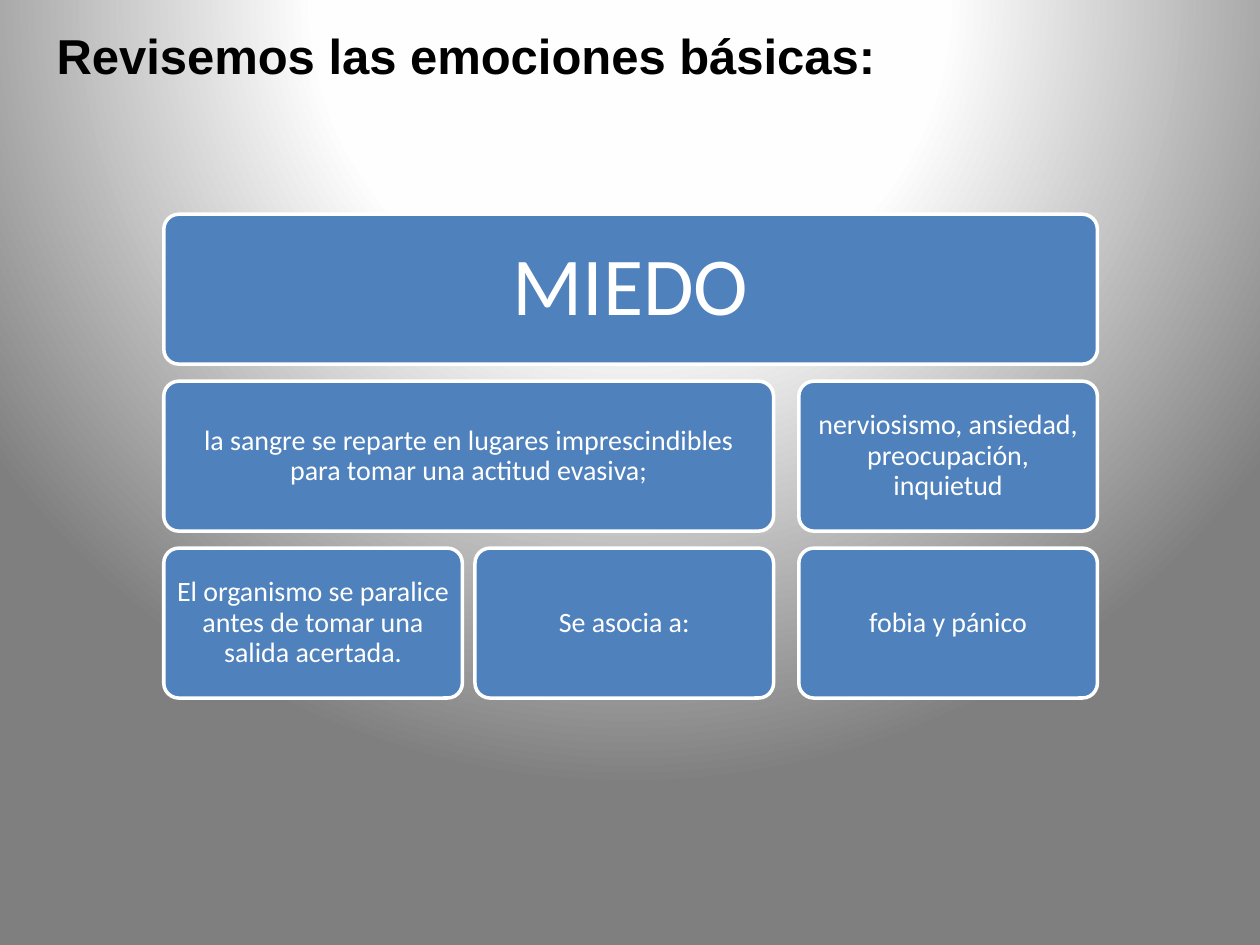
from pptx import Presentation
from pptx.dml.color import RGBColor
from pptx.enum.shapes import MSO_SHAPE
from pptx.enum.text import MSO_ANCHOR, PP_ALIGN
from pptx.oxml import parse_xml
from pptx.oxml.ns import nsdecls
from pptx.util import Inches, Pt

COLORS = {
    "title": "000000",
    "box": "4F81BD",
    "light": "FFFFFF",
    "glow": "FEFEFE",
    "edge": "7F7F7F",
}

LEFT, TOP = 1.3, 1.7
BOX_WIDTH, BOX_HEIGHT = 2.37, 1.19
ROW_STEP = 1.325
COLUMNS = [LEFT, 3.77, 6.34]

BOXES = [
    (0, 0, 2, "MIEDO", 47, 0.2),
    (1, 0, 1, "la sangre se reparte en lugares imprescindibles para tomar una actitud evasiva;", 16, 0.07),
    (2, 0, 0, "El organismo se paralice antes de tomar una salida acertada.", 16, 0.07),
    (2, 1, 1, "Se asocia a:", 16, 0.07),
    (1, 2, 2, "nerviosismo, ansiedad, preocupación, inquietud", 16, 0.07),
    (2, 2, 2, "fobia y pánico", 16, 0.07),
]


def color(name):
    return RGBColor.from_string(COLORS[name])


def set_background(slide):
    stops = "".join(
        f'<a:gs pos="{position * 1000}"><a:srgbClr val="{COLORS[name]}"/></a:gs>'
        for position, name in [(0, "light"), (40, "glow"), (100, "edge")]
    )
    background = parse_xml(
        f'<p:bg {nsdecls("p", "a")}><p:bgPr><a:gradFill rotWithShape="1">'
        f'<a:gsLst>{stops}</a:gsLst><a:path path="circle">'
        '<a:fillToRect l="50000" t="-80000" r="50000" b="180000"/></a:path>'
        "</a:gradFill><a:effectLst/></p:bgPr></p:bg>"
    )
    slide.element.cSld.insert(0, background)


def add_run(paragraph, text, font, size, color_name, bold=False):
    run = paragraph.add_run()
    run.text = text
    run.font.name = font
    run.font.size = Pt(size)
    run.font.bold = bold
    run.font.color.rgb = color(color_name)


def add_title(slide, text):
    title = slide.shapes.add_textbox(Inches(0.35), Inches(0.15), Inches(9.21), Inches(1.45))
    title.text_frame.word_wrap = True
    add_run(title.text_frame.paragraphs[0], text, "Arial", 28, "title", bold=True)


def add_box(group, row, first, last, text, size, inset):
    width = COLUMNS[last] + BOX_WIDTH - COLUMNS[first]
    box = group.shapes.add_shape(
        MSO_SHAPE.ROUNDED_RECTANGLE,
        Inches(COLUMNS[first]),
        Inches(TOP + row * ROW_STEP),
        Inches(width),
        Inches(BOX_HEIGHT),
    )
    box.adjustments[0] = 0.1
    box.shadow.inherit = False
    box.fill.solid()
    box.fill.fore_color.rgb = color("box")
    box.line.color.rgb = color("light")
    box.line.width = Pt(2)
    frame = box.text_frame
    frame.word_wrap = True
    frame.vertical_anchor = MSO_ANCHOR.MIDDLE
    frame.margin_left = frame.margin_right = Inches(inset)
    frame.margin_top = frame.margin_bottom = Inches(inset)
    paragraph = frame.paragraphs[0]
    paragraph.alignment = PP_ALIGN.CENTER
    paragraph.line_spacing = 0.9
    add_run(paragraph, text, "Calibri", size, "light")


def main():
    presentation = Presentation()
    presentation.slide_width = Inches(10)
    presentation.slide_height = Inches(7.5)
    slide = presentation.slides.add_slide(presentation.slide_layouts[6])
    set_background(slide)
    add_title(slide, "Revisemos las emociones básicas:")
    hierarchy = slide.shapes.add_group_shape()
    for box in BOXES:
        add_box(hierarchy, *box)
    presentation.save("out.pptx")


if __name__ == "__main__":
    main()
